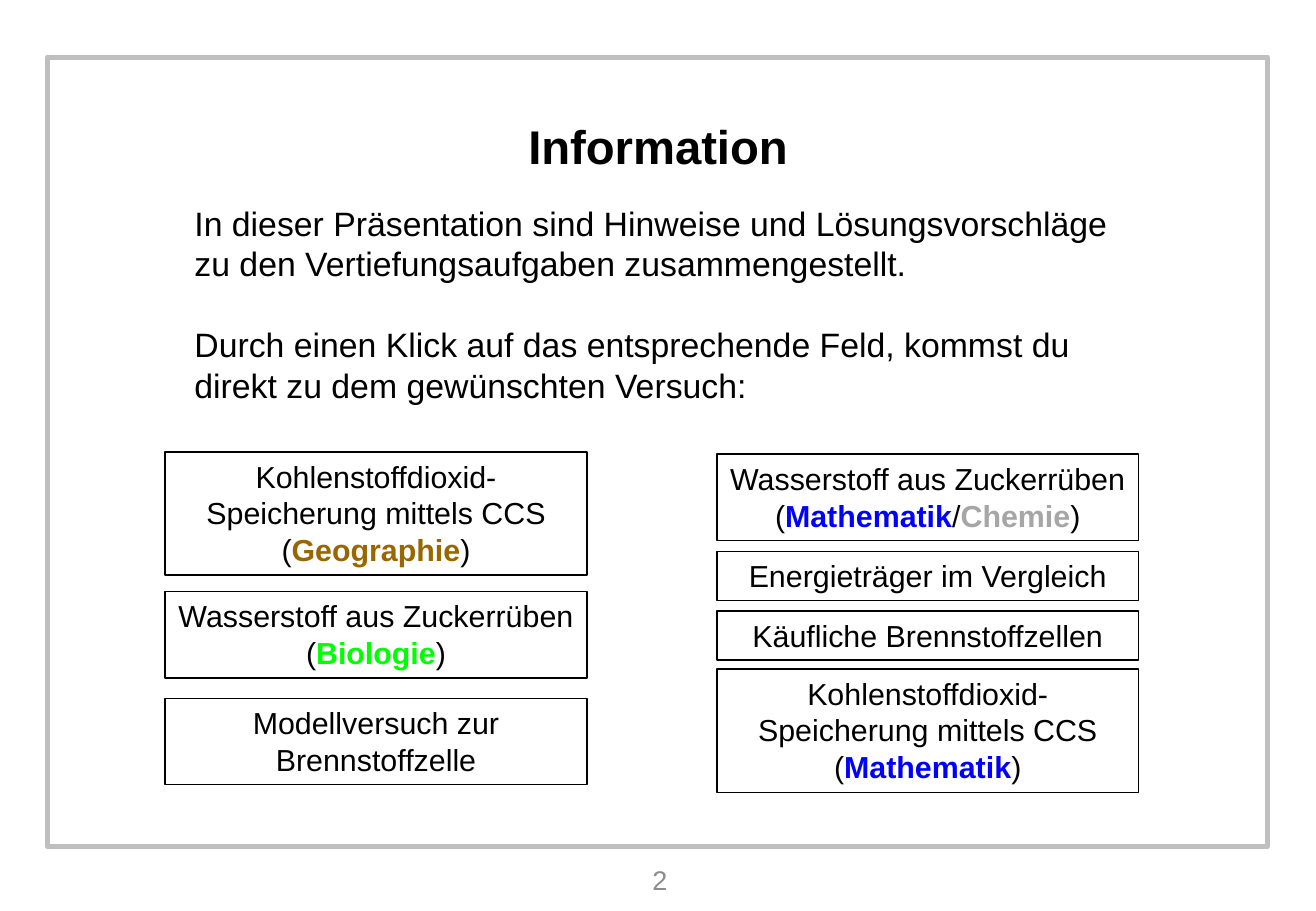
"""Build the information slide with its two columns of experiment fields."""
from pptx import Presentation
from pptx.dml.color import RGBColor
from pptx.enum.shapes import MSO_SHAPE
from pptx.enum.text import MSO_ANCHOR, MSO_AUTO_SIZE, PP_ALIGN
from pptx.oxml.ns import qn
from pptx.util import Inches, Pt

RECTANGLE = MSO_SHAPE.RECTANGLE
TOP, MIDDLE = MSO_ANCHOR.TOP, MSO_ANCHOR.MIDDLE
LEFT, CENTER = PP_ALIGN.LEFT, PP_ALIGN.CENTER
NO_AUTOFIT, GROW = MSO_AUTO_SIZE.NONE, MSO_AUTO_SIZE.SHAPE_TO_FIT_TEXT

FONT = "Arial"
COLORS = {
    "text": "000000",
    "field": "FFFFFF",
    "frame": "BFBFBF",
    "number": "8C8C8C",
    "geography": "996600",
    "biology": "00FF00",
    "mathematics": "0000FF",
    "chemistry": "A6A6A6",
}

TITLE = [["Information"]]
INTRODUCTION = [
    ["In dieser Präsentation sind Hinweise und Lösungsvorschläge "
     "zu den Vertiefungsaufgaben zusammengestellt."],
    ["Durch einen Klick auf das entsprechende Feld, kommst du "
     "direkt zu dem gewünschten Versuch:"],
]
PAGE_NUMBER = [["2"]]

STORAGE = "Kohlenstoffdioxid-Speicherung mittels CCS ("
SUGAR_BEET = ["Wasserstoff aus Zuckerrüben"]
GEOGRAPHY = ("Geographie", "geography")
BIOLOGY = ("Biologie", "biology")
MATHEMATICS = ("Mathematik", "mathematics")
CHEMISTRY = ("Chemie", "chemistry")

# left edge -> fields as (top, number of lines, paragraphs)
COLUMNS = {
    1.36: [
        (3.72, 3, [[STORAGE, GEOGRAPHY, ")"]]),
        (4.87, 2, [SUGAR_BEET, ["(", BIOLOGY, ")"]]),
        (5.75, 2, [["Modellversuch zur Brennstoffzelle"]]),
    ],
    5.9: [
        (3.74, 2, [SUGAR_BEET, ["(", MATHEMATICS, "/", CHEMISTRY, ")"]]),
        (4.54, 1, [["Energieträger im Vergleich"]]),
        (5.03, 1, [["Käufliche Brennstoffzellen"]]),
        (5.51, 3, [[STORAGE, MATHEMATICS, ")"]]),
    ],
}
FIELD_WIDTH = 3.47
FIELD_PADDING = 0.1
LINE_HEIGHT = 0.305


def color(name):
    return RGBColor.from_string(COLORS[name])


def write_text(shape, paragraphs, size, base="text", bold=False, align=CENTER,
               anchor=MIDDLE, gap=0, fit=NO_AUTOFIT):
    """Write paragraphs of plain strings and bold (text, colour) pairs."""
    frame = shape.text_frame
    frame.word_wrap = True
    frame.auto_size = fit
    frame.vertical_anchor = anchor
    for index, parts in enumerate(paragraphs):
        paragraph = frame.paragraphs[0] if index == 0 else frame.add_paragraph()
        paragraph.alignment = align
        paragraph.space_before = Pt(gap if index else 0)
        for part in parts:
            highlighted = isinstance(part, tuple)
            text, name = part if highlighted else (part, base)
            run = paragraph.add_run()
            run.text = text
            run.font.name = FONT
            run.font.size = Pt(size)
            run.font.bold = bold or highlighted
            run.font.color.rgb = color(name)


def place(shape, left, top, width, height):
    shape.left, shape.top = Inches(left), Inches(top)
    shape.width, shape.height = Inches(width), Inches(height)


def add_rectangle(slide, left, top, width, height, line, weight, fill=None):
    shape = slide.shapes.add_shape(
        RECTANGLE, Inches(left), Inches(top), Inches(width), Inches(height))
    shape.shadow.inherit = False
    if fill:
        shape.fill.solid()
        shape.fill.fore_color.rgb = color(fill)
    else:
        shape.fill.background()
    shape.line.color.rgb = color(line)
    shape.line.width = Pt(weight)
    return shape


def remove_bullets(shape):
    for paragraph in shape.text_frame.paragraphs:
        properties = paragraph._p.get_or_add_pPr()
        properties.set("marL", "0")
        properties.set("indent", "0")
        properties.append(properties.makeelement(qn("a:buNone"), {}))


def main():
    presentation = Presentation()
    presentation.slide_width = Inches(10.83)
    presentation.slide_height = Inches(7.5)
    slide = presentation.slides.add_slide(presentation.slide_layouts[1])

    add_rectangle(slide, 0.39, 0.47, 10.04, 6.5, line="frame", weight=3)

    title = slide.shapes.title
    place(title, 0.79, 0.71, 9.25, 0.98)
    write_text(title, TITLE, size=28, bold=True)

    body = slide.placeholders[1]
    place(body, 1.5, 1.57, 7.87, 1.86)
    write_text(body, INTRODUCTION, size=20, align=LEFT, gap=24)
    remove_bullets(body)

    number = slide.shapes.add_textbox(
        Inches(4.21), Inches(7.05), Inches(2.44), Inches(0.39))
    write_text(number, PAGE_NUMBER, size=16, base="number")

    for left, fields in COLUMNS.items():
        for top, lines, paragraphs in fields:
            height = FIELD_PADDING + lines * LINE_HEIGHT
            field = add_rectangle(slide, left, top, FIELD_WIDTH, height,
                                  line="text", weight=1, fill="field")
            write_text(field, paragraphs, size=18, anchor=TOP, fit=GROW)

    presentation.save("out.pptx")


if __name__ == "__main__":
    main()
